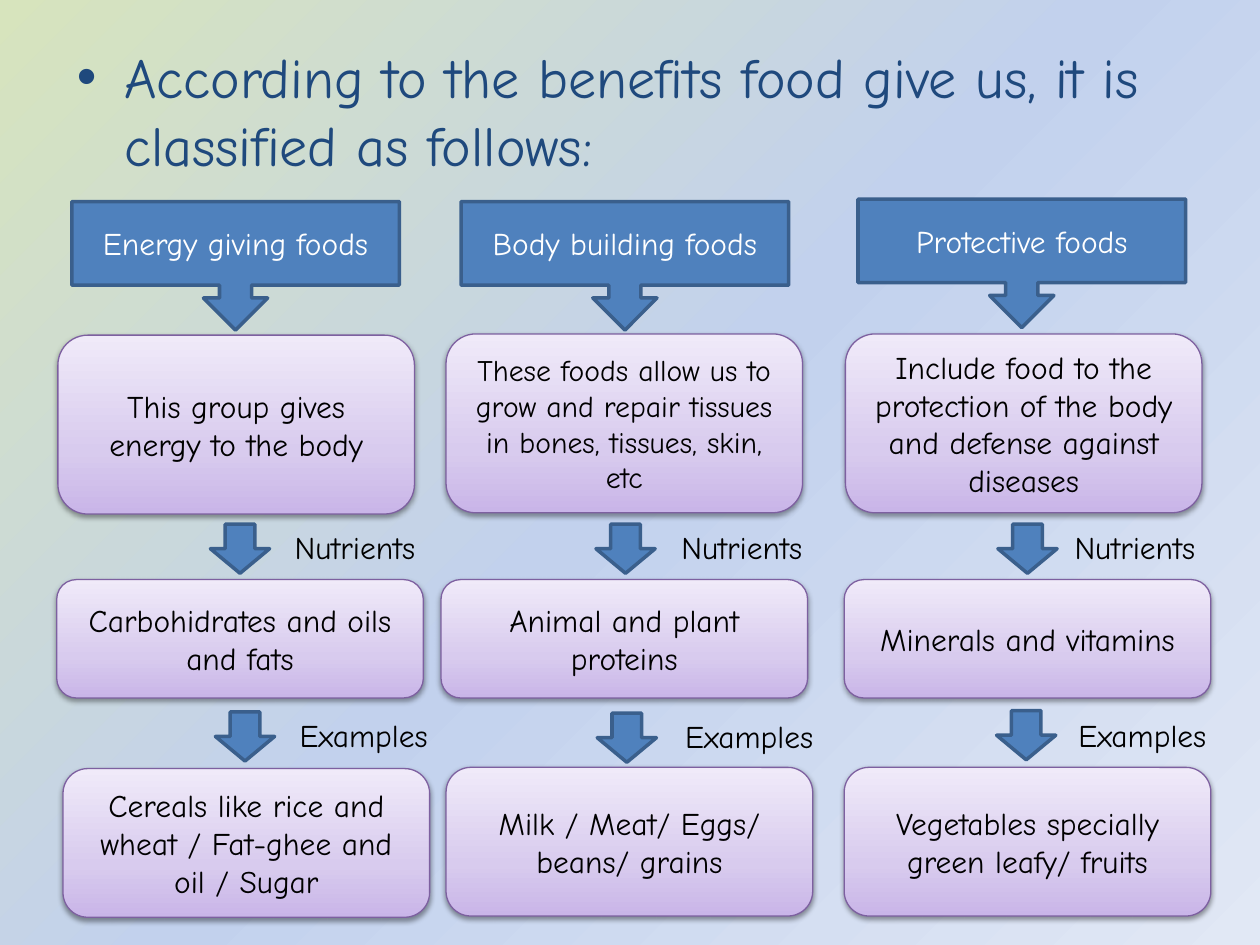
"""Build a slide that classifies foods by the benefits they give."""
from lxml import etree
from pptx import Presentation
from pptx.dml.color import RGBColor
from pptx.enum.shapes import MSO_SHAPE
from pptx.enum.text import MSO_ANCHOR, PP_ALIGN
from pptx.oxml.ns import qn
from pptx.util import Inches, Pt

CALLOUT = MSO_SHAPE.DOWN_ARROW_CALLOUT
ARROW = MSO_SHAPE.DOWN_ARROW
ROUNDED = MSO_SHAPE.ROUNDED_RECTANGLE
MIDDLE = MSO_ANCHOR.MIDDLE
CENTER = PP_ALIGN.CENTER

FONT = "Comic Neue"
BLACK = RGBColor(0x00, 0x00, 0x00)
WHITE = RGBColor(0xFF, 0xFF, 0xFF)
NAVY = RGBColor(0x1F, 0x49, 0x7D)
BLUE = RGBColor(0x4F, 0x81, 0xBD)
DARK_BLUE = RGBColor(0x3A, 0x5F, 0x8C)
PURPLE = RGBColor(0x7D, 0x60, 0xA0)
SKY = [(0, RGBColor(0xD7, 0xE4, 0xBD)), (50, RGBColor(0xC2, 0xD1, 0xED)),
       (100, RGBColor(0xE1, 0xE8, 0xF5))]
LILAC = [(0, RGBColor(0xC9, 0xB5, 0xE8)), (35, RGBColor(0xD8, 0xCB, 0xEE)),
         (100, RGBColor(0xF0, 0xEA, 0xF9))]

HEADING = "According to the benefits food give us, it is classified as follows:"
GROUPS = ["Energy giving foods", "Body building foods", "Protective foods"]
BENEFITS = ["This group gives energy to the body",
            "These foods allow us to grow and repair tissues in bones, tissues, skin, etc",
            "Include food to the protection of the body and defense against diseases"]
NUTRIENTS = ["Carbohidrates and oils and fats", "Animal and plant proteins",
             "Minerals and vitamins"]
EXAMPLES = ["Cereals like rice and wheat / Fat-ghee and oil / Sugar",
            "Milk / Meat/ Eggs/ beans/ grains",
            "Vegetables specially green leafy/ fruits"]

GROUP_SIZE = (2.6, 1.02)
GROUP_SPOTS = [(0.57, 1.6), (3.66, 1.6), (6.81, 1.58)]
CARD_ROWS = [
    (BENEFITS, (18, 17, 18), (2.83, 1.42), [(0.46, 2.66), (3.54, 2.65), (6.71, 2.65)]),
    (NUTRIENTS, (18, 18, 18), (2.91, 0.94), [(0.45, 4.6), (3.5, 4.6), (6.7, 4.6)]),
    (EXAMPLES, (18, 18, 18), (2.91, 1.18), [(0.5, 6.1), (3.54, 6.09), (6.7, 6.09)]),
]
ARROW_SIZE = (0.47, 0.39)
STEP_ROWS = [
    ("Nutrients", (1.57, 0.4), [(1.67, 4.16), (4.73, 4.16), (7.92, 4.16)],
     [(2.24, 4.14), (5.31, 4.14), (8.43, 4.14)]),
    ("Examples", (1.34, 0.4), [(1.71, 5.65), (4.74, 5.66), (7.91, 5.64)],
     [(2.28, 5.63), (5.34, 5.64), (8.46, 5.63)]),
]


def place(spot, size):
    return [Inches(length) for length in (*spot, *size)]


def write(frame, text, size, color):
    frame.word_wrap = True
    frame.text = text
    font = frame.paragraphs[0].font
    font.name, font.size = FONT, Pt(size)
    font.color.rgb = color


def paint_gradient(fill, owner, stops, angle):
    fill.gradient()
    fill.gradient_angle = angle
    stop_list = next(owner.iter(qn("a:gsLst")))
    for stop in list(stop_list):
        stop_list.remove(stop)
    for percent, color in stops:
        stop = etree.SubElement(stop_list, qn("a:gs"), pos=str(percent * 1000))
        etree.SubElement(stop, qn("a:srgbClr"), val=str(color))


def add_outlined(slide, kind, spot, size, line_color, line_width):
    shape = slide.shapes.add_shape(kind, *place(spot, size))
    shape.shadow.inherit = False
    shape.line.color.rgb = line_color
    shape.line.width = Pt(line_width)
    return shape


def add_blue(slide, kind, spot, size):
    shape = add_outlined(slide, kind, spot, size, DARK_BLUE, 2)
    shape.fill.solid()
    shape.fill.fore_color.rgb = BLUE
    return shape


def center_text(shape, text, size, color):
    write(shape.text_frame, text, size, color)
    shape.text_frame.vertical_anchor = MIDDLE
    shape.text_frame.paragraphs[0].alignment = CENTER


def add_card(slide, text, font_size, spot, size):
    card = add_outlined(slide, ROUNDED, spot, size, PURPLE, 0.75)
    paint_gradient(card.fill, card.element, LILAC, 90)
    effects = next(card.element.iter(qn("a:effectLst")))
    shadow = etree.SubElement(effects, qn("a:outerShdw"), blurRad=str(Pt(3.1)),
                              dist=str(Pt(1.6)), dir="5400000", rotWithShape="0")
    shade = etree.SubElement(shadow, qn("a:srgbClr"), val=str(BLACK))
    etree.SubElement(shade, qn("a:alpha"), val="38000")
    center_text(card, text, font_size, BLACK)


def main():
    deck = Presentation()
    deck.slide_width, deck.slide_height = Inches(10), Inches(7.5)
    slide = deck.slides.add_slide(deck.slide_layouts[1])
    paint_gradient(slide.background.fill, slide.element, SKY, 315)

    title = slide.shapes.title
    title.element.getparent().remove(title.element)
    heading = slide.placeholders[1]
    heading.left, heading.top, heading.width, heading.height = place((0.51, 0.29), (9, 1.18))
    write(heading.text_frame, HEADING, 32, NAVY)

    for group, spot in zip(GROUPS, GROUP_SPOTS):
        center_text(add_blue(slide, CALLOUT, spot, GROUP_SIZE), group, 18, WHITE)
    for texts, font_sizes, size, spots in CARD_ROWS:
        for text, font_size, spot in zip(texts, font_sizes, spots):
            add_card(slide, text, font_size, spot, size)
    for step, size, arrow_spots, label_spots in STEP_ROWS:
        for arrow_spot, label_spot in zip(arrow_spots, label_spots):
            add_blue(slide, ARROW, arrow_spot, ARROW_SIZE)
            label = slide.shapes.add_textbox(*place(label_spot, size))
            write(label.text_frame, step, 18, BLACK)

    deck.save("out.pptx")


if __name__ == "__main__":
    main()
